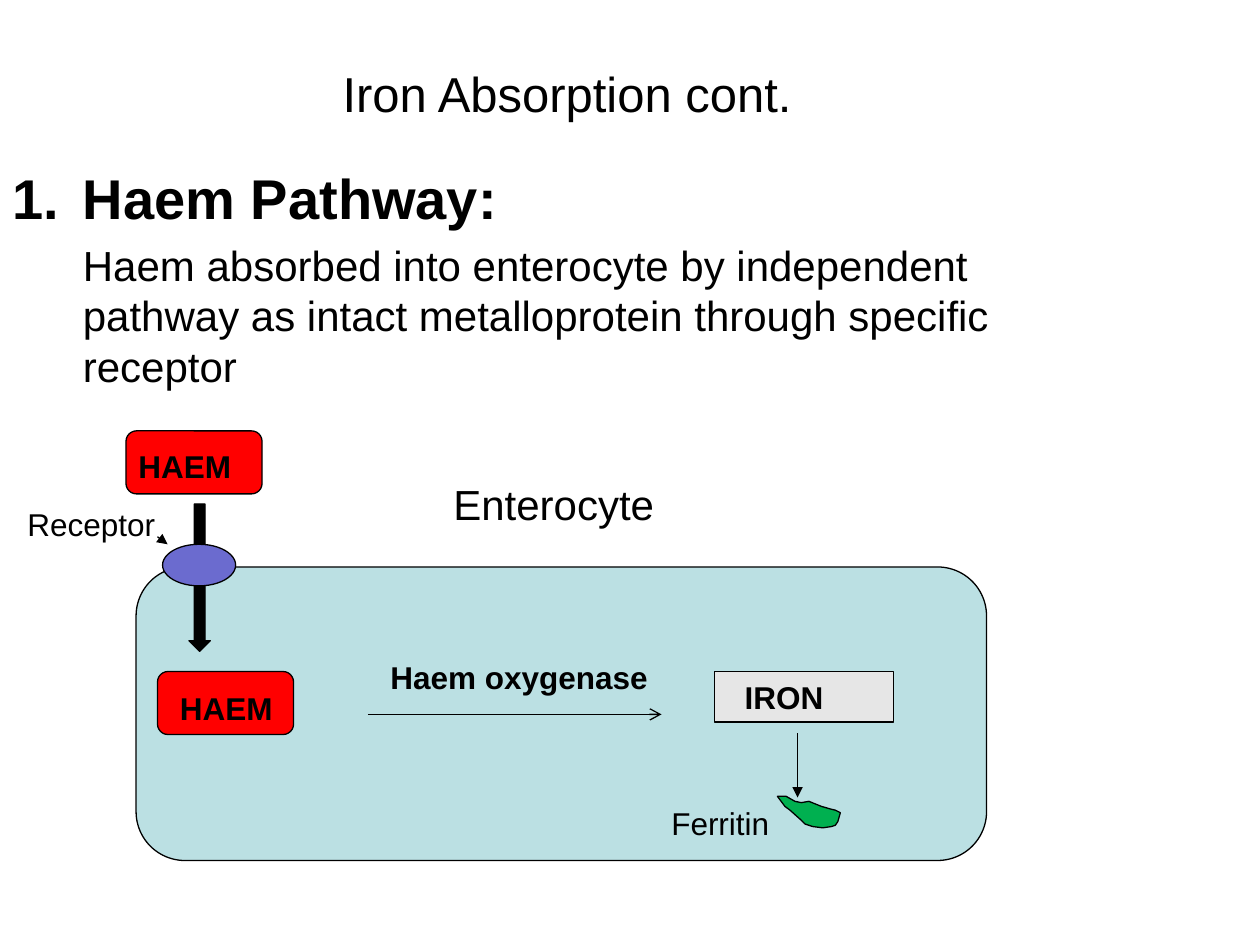
from pptx import Presentation
from pptx import util as u
from pptx.dml import color
from pptx.enum import shapes, text
from pptx.oxml import xmlchemy
from pptx.oxml.ns import qn
from lxml import etree

Inches, Pt = u.Inches, u.Pt
AUTO = shapes.MSO_SHAPE


def rgb(value):
    return color.RGBColor.from_string(value)


def write(paragraph, words, size, bold=False):
    paragraph.text = words
    paragraph.font.name = "Arial"
    paragraph.font.size = Pt(size)
    paragraph.font.bold = bold
    paragraph.font.color.rgb = rgb("000000")


prs = Presentation()
prs.slide_width, prs.slide_height = Inches(10), Inches(7.5)
slide = prs.slides.add_slide(prs.slide_layouts[5])

# Title
title = slide.shapes.title
title.left, title.top, title.width, title.height = (
    Inches(n) for n in (0, 0.3, 9, 0.87))
title.text_frame.vertical_anchor = text.MSO_ANCHOR.MIDDLE
write(title.text_frame.paragraphs[0], "Iron Absorption cont.", 28)
title.text_frame.paragraphs[0].alignment = text.PP_ALIGN.CENTER

# Numbered heading and its explanation
pathway = slide.shapes.add_textbox(Inches(0), Inches(1.25), Inches(9), Inches(2)).text_frame
pathway.word_wrap = True
heading = pathway.paragraphs[0]
explanation = pathway.add_paragraph()
write(heading, "Haem Pathway:", 32, True)
write(explanation, "Haem absorbed into enterocyte by independent pathway as intact "
      "metalloprotein through specific receptor", 24)
for paragraph, indent, before in ((heading, -0.56, 6.4), (explanation, 0, 4.8)):
    paragraph.space_before = Pt(before)
    properties = paragraph._p.get_or_add_pPr()
    properties.set("marL", str(Inches(0.56)))
    properties.set("indent", str(Inches(indent)))
etree.SubElement(heading._p.pPr, qn("a:buFont"), typeface="+mj-lt")
etree.SubElement(heading._p.pPr, qn("a:buAutoNum"), type="arabicPeriod")

# Cell, haem, transport arrow, receptor and iron, from back to front
parts = [
    (AUTO.ROUNDED_RECTANGLE, 1.08, 4.5, 6.75, 2.33, "BBE0E3"),
    (AUTO.ROUNDED_RECTANGLE, 1, 3.42, 1.08, 0.5, "FF0000"),
    (AUTO.DOWN_ARROW, 1.5, 4, 0.17, 1.17, "000000"),
    (AUTO.ROUNDED_RECTANGLE, 1.25, 5.33, 1.08, 0.5, "FF0000"),
    (AUTO.OVAL, 1.29, 4.32, 0.58, 0.33, "6B6BCF"),
    (AUTO.RECTANGLE, 5.67, 5.33, 1.42, 0.4, "E6E6E6"),
]
drawn = [(slide.shapes.add_shape(kind, *(Inches(n) for n in box)), fill)
         for kind, *box, fill in parts]
iron = drawn[-1][0]
iron.text_frame.margin_left = Inches(0.24)
write(iron.text_frame.paragraphs[0], "IRON", 18, True)
iron.text_frame.paragraphs[0].alignment = text.PP_ALIGN.LEFT

# Ferritin outline
outline = [(6.17, 6.32), (6.23, 6.4), (6.27, 6.43), (6.36, 6.51), (6.39, 6.54),
           (6.45, 6.56), (6.53, 6.57), (6.6, 6.56), (6.63, 6.55), (6.65, 6.52),
           (6.67, 6.45), (6.63, 6.43), (6.59, 6.42), (6.52, 6.4), (6.42, 6.36),
           (6.36, 6.37), (6.31, 6.36), (6.24, 6.32)]
points = [(Inches(x), Inches(y)) for x, y in outline]
builder = slide.shapes.build_freeform(*points[0])
builder.add_line_segments(points[1:], close=True)
drawn.append((builder.convert_to_shape(), "00B050"))

for shape, fill in drawn:
    shape.shadow.inherit = False
    shape.fill.solid()
    shape.fill.fore_color.rgb = rgb(fill)
    shape.line.color.rgb = rgb("000000")
    shape.line.width = Pt(0.75)

# Labels
for words, left, top, width, height, size, bold in (
        ("Haem oxygenase", 3, 5.17, 2.25, 0.4, 18, True),
        ("Enterocyte", 3.5, 3.75, 4, 0.51, 24, False),
        ("HAEM", 1, 3.5, 1.33, 0.4, 18, True),
        ("HAEM", 1.33, 5.42, 1.33, 0.4, 18, True),
        ("Receptor", 0.12, 3.96, 1.3, 0.4, 18, False),
        ("Ferritin", 5.23, 6.33, 1.5, 0.4, 18, False)):
    label = slide.shapes.add_textbox(Inches(left), Inches(top), Inches(width), Inches(height))
    label.text_frame.word_wrap = True
    write(label.text_frame.paragraphs[0], words, size, bold)

# Arrows: enzyme step, receptor pointer, iron to ferritin
for x1, y1, x2, y2, head in ((2.92, 5.67, 5.25, 5.67, "arrow"),
                             (1.25, 4.26, 1.33, 4.32, "triangle"),
                             (6.33, 5.82, 6.33, 6.33, "triangle")):
    arrow = slide.shapes.add_connector(
        shapes.MSO_CONNECTOR.STRAIGHT, Inches(x1), Inches(y1), Inches(x2), Inches(y2))
    arrow.line.color.rgb = rgb("000000")
    arrow.line.width = Pt(0.75)
    etree.SubElement(arrow.line._get_or_add_ln(), qn("a:tailEnd"), type=head)
    etree.SubElement(arrow._element.spPr, qn("a:effectLst"))

prs.save("out.pptx")
